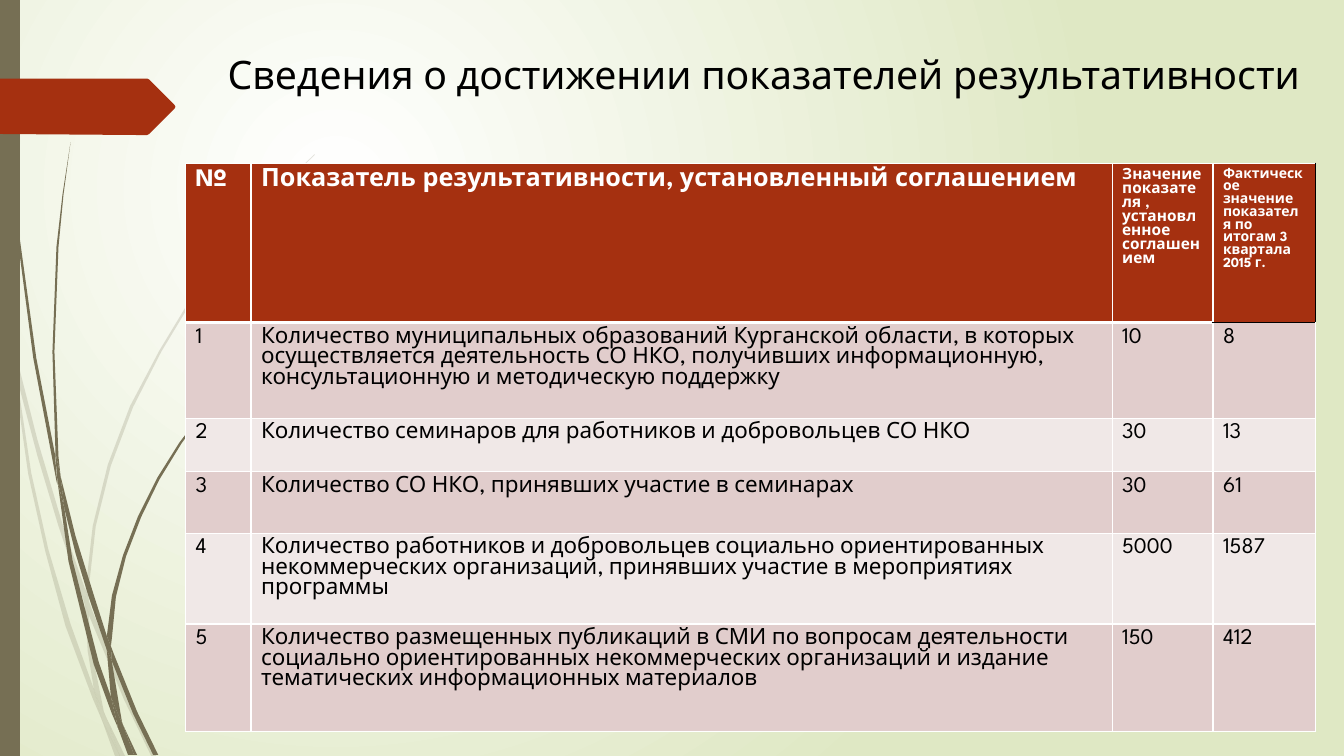
import pptx
import pptx.dml.color
import pptx.enum.text
import pptx.oxml
import pptx.oxml.ns
import pptx.util
from pptx.util import Inches

FONT = "League Spartan"
OLIVE, RED, WHITE, BLACK = "766F54", "A53010", "FFFFFF", "000000"
BANDS = ["F0E8E7", "E1CDCC"]
NS = pptx.oxml.ns.nsdecls("a")


def rgb(color):
    return pptx.dml.color.RGBColor.from_string(color)


def write(p, text, size=16, color=BLACK, bold=False, align=None):
    p.alignment = align
    r = p.add_run()
    r.text = text
    r.font.name = FONT
    r.font.size = pptx.util.Pt(size)
    r.font.bold = bold
    r.font.color.rgb = rgb(color)


prs = pptx.Presentation()
prs.slide_width, prs.slide_height = Inches(13.33), Inches(7.5)
s = prs.slides.add_slide(prs.slide_layouts[5])

# Background: radial gradient
fill = s.background.fill
fill.gradient()
for stop, color in zip(fill.gradient_stops, [WHITE, "DFE8C4"]):
    stop.color.rgb = rgb(color)
lin = s.element.find(".//" + pptx.oxml.ns.qn("a:lin"))
lin.getparent().replace(lin, pptx.oxml.parse_xml(
    f'<a:path {NS} path="circle">'
    '<a:fillToRect l="50000" t="50000" r="100000" b="100000"/></a:path>'))

# Grass blades: outline points in inches, pale blades behind dark ones
PALE_BLADES = [
    [(0.11, 3.5), (0.09, 3.22), (0, 2.82), (0, 2.99), (0.1, 3.44)],
    [(0.58, 5.22), (0.84, 5.99), (0.85, 5.86), (0.62, 5.2), (0.37, 4.36),
     (0.14, 3.45), (0.17, 3.76), (0.37, 4.52)],
    [(0.92, 6.07), (0.88, 5.96), (0.88, 6.1), (1.23, 6.94), (1.5, 7.5),
     (1.55, 7.5), (1.27, 6.92)],
    [(1.19, 7.5), (1.24, 7.5), (1.05, 7.11)],
    [(0.93, 6.83), (0.7, 6.19), (0.48, 5.45), (0.31, 4.69), (0.17, 3.76),
     (0.11, 3.5), (0.28, 4.7), (0.45, 5.47), (0.65, 6.21), (0.92, 6.93),
     (1.01, 7.14), (0.99, 7.07)],
    [(0.84, 5.99), (0.87, 6.46), (0.93, 6.83), (0.96, 6.92), (1.05, 7.11),
     (1.03, 7.06), (0.91, 6.46), (0.88, 6.1), (0.88, 6.08)],
    [(0.88, 5.84), (0.95, 5.22), (1.1, 4.62), (1.32, 4.04), (1.6, 3.49),
     (1.92, 2.96), (2.29, 2.45), (2.68, 1.98), (2.9, 1.75), (3.12, 1.54),
     (3.12, 1.53), (2.89, 1.75), (2.68, 1.97), (2.28, 2.44), (1.9, 2.95),
     (1.58, 3.48), (1.29, 4.03), (1.07, 4.61), (0.92, 5.22), (0.85, 5.84),
     (0.85, 5.86), (0.88, 5.96)],
    [(1.01, 7.14), (1.14, 7.5), (1.19, 7.5)],
    [(0.88, 6.08), (0.88, 6.1), (0.88, 5.96), (0.85, 5.86), (0.84, 5.99)],
    [(0.96, 6.92), (0.93, 6.83), (0.99, 7.07), (1.01, 7.14), (1.19, 7.5),
     (1.05, 7.11)],
]
DARK_BLADES = [
    [(0.07, 1.1), (0.17, 2.33), (0.33, 3.55), (0.56, 4.77), (0.57, 4.81),
     (0.55, 4.57), (0.55, 4.53), (0.36, 3.55), (0.19, 2.32), (0.08, 1.09),
     (0.05, 0.48), (0.04, 0), (0.03, 0), (0.04, 0.48)],
    [(0.88, 5.92), (1.06, 6.45), (1.06, 6.31), (0.93, 5.9), (0.75, 5.32),
     (0.6, 4.72), (0.64, 5.05), (0.75, 5.49)],
    [(1.13, 6.49), (1.1, 6.41), (1.11, 6.56), (1.32, 7.08), (1.52, 7.49),
     (1.57, 7.49), (1.36, 7.06)],
    [(1.1, 6.91), (0.98, 6.57), (0.72, 5.56), (0.64, 5.05), (0.57, 4.77),
     (0.68, 5.57), (0.93, 6.59), (1.11, 7.08), (1.17, 7.22), (1.16, 7.17)],
    [(0.6, 4.72), (0.58, 4.53), (0.54, 3.49), (0.58, 2.45), (0.63, 1.93),
     (0.7, 1.41), (0.62, 1.93), (0.56, 2.45), (0.52, 3.49), (0.55, 4.49)],
    [(1.33, 7.49), (1.36, 7.49), (1.22, 7.19)],
    [(0.57, 4.77), (0.64, 5.05), (0.6, 4.72), (0.55, 4.49), (0.55, 4.53)],
    [(1.11, 6.33), (1.15, 5.92), (1.25, 5.52), (1.4, 5.13), (1.58, 4.76),
     (1.8, 4.4), (2.05, 4.06), (2.31, 3.74), (2.45, 3.59), (2.61, 3.44),
     (2.6, 3.44), (2.45, 3.58), (2.31, 3.73), (2.04, 4.05), (1.78, 4.39),
     (1.56, 4.74), (1.37, 5.12), (1.22, 5.51), (1.11, 5.91), (1.06, 6.31),
     (1.1, 6.41)],
    [(1.17, 7.22), (1.27, 7.49), (1.31, 7.49)],
    [(1.06, 6.45), (1.1, 6.91), (1.16, 7.06), (1.22, 7.19), (1.21, 7.16),
     (1.11, 6.56), (1.09, 6.51)],
    [(1.06, 6.45), (1.09, 6.51), (1.11, 6.56), (1.1, 6.41), (1.06, 6.31)],
    [(1.16, 7.06), (1.1, 6.91), (1.16, 7.17), (1.17, 7.22), (1.3, 7.49),
     (1.33, 7.49), (1.22, 7.19)],
]
SIDE_BAR = [(0, 0), (0.2, 0), (0.2, 7.5), (0, 7.5)]
RED_ARROW = [(0, 0.78), (1.46, 0.78), (1.48, 0.79), (1.73, 1.04), (1.74, 1.06),
             (1.73, 1.08), (1.48, 1.33), (1.46, 1.34), (1.36, 1.34), (0, 1.33)]

for outlines, color, opacity in [(PALE_BLADES, OLIVE, 20), (DARK_BLADES, OLIVE, 100),
                                 ([SIDE_BAR], OLIVE, 100), ([RED_ARROW], RED, 100)]:
    for outline in outlines:
        points = [(Inches(x), Inches(y)) for x, y in outline]
        builder = s.shapes.build_freeform(*points[0])
        builder.add_line_segments(points[1:], close=True)
        sp = builder.convert_to_shape()
        sp.shadow.inherit = False
        sp.line.fill.background()
        sp.fill.solid()
        sp.fill.fore_color.rgb = rgb(color)
        if opacity < 100:
            clr = sp.element.spPr.find(".//" + pptx.oxml.ns.qn("a:srgbClr"))
            clr.append(pptx.oxml.parse_xml(f'<a:alpha {NS} val="{opacity * 1000}"/>'))

# Title
title = s.shapes.title
title.left, title.top = Inches(2.1), Inches(0.45)
title.width, title.height = Inches(10.95), Inches(1.4)
tf = title.text_frame
tf.word_wrap = True
tf.auto_size = pptx.enum.text.MSO_AUTO_SIZE.NONE
tf.vertical_anchor = pptx.enum.text.MSO_ANCHOR.TOP
write(tf.paragraphs[0], "Сведения о достижении показателей результативности",
      size=28, align=pptx.enum.text.PP_ALIGN.CENTER)

# Table of indicators
ROWS = [
    ("№", "Показатель результативности, установленный соглашением",
     "Значение показателя , установленное соглашением",
     "Фактическое значение показателя по итогам 3 квартала\n2015 г."),
    ("1", "Количество муниципальных образований Курганской области, в которых "
     "осуществляется деятельность СО НКО, получивших информационную, "
     "консультационную и методическую поддержку", "10", "8"),
    ("2", "Количество семинаров для работников и добровольцев СО НКО", "30", "13"),
    ("3", "Количество СО НКО, принявших участие в семинарах", "30", "61"),
    ("4", "Количество работников и добровольцев социально ориентированных "
     "некоммерческих организаций, принявших участие в мероприятиях программы",
     "5000", "1587"),
    ("5", "Количество размещенных публикаций в СМИ по вопросам деятельности "
     "социально ориентированных некоммерческих организаций и издание "
     "тематических информационных материалов", "150", "412"),
]
HEADER_SIZES = [18, 18, 11, 10]
table = s.shapes.add_table(len(ROWS), 4, Inches(1.84), Inches(1.62),
                           Inches(11.21), Inches(5.64)).table
for column, width in zip(table.columns, [0.65, 8.54, 1, 1.02]):
    column.width = Inches(width)
for row, height in zip(table.rows, [1.58, 0.95, 0.53, 0.61, 0.9, 1.07]):
    row.height = Inches(height)

for i, texts in enumerate(ROWS):
    for j, text in enumerate(texts):
        header = i == 0
        cell = table.cell(i, j)
        cell.fill.solid()
        cell.fill.fore_color.rgb = rgb(RED if header else BANDS[i % 2])
        tf = cell.text_frame
        for k, line in enumerate(text.split("\n")):
            p = tf.add_paragraph() if k else tf.paragraphs[0]
            write(p, line, size=HEADER_SIZES[j] if header else 16,
                  color=WHITE if header else BLACK, bold=header)

        borders = {side: (WHITE, 1) for side in "LRTB"}
        if header:
            borders["B"] = (WHITE, 3)
        if (i, j) == (0, 3):
            borders["R"] = borders["B"] = (BLACK, 1)
        if (i, j) == (1, 3):
            borders["T"] = (BLACK, 1)
        tcPr = cell._tc.get_or_add_tcPr()
        for n, (side, (color, width)) in enumerate(borders.items()):
            tcPr.insert(n, pptx.oxml.parse_xml(
                f'<a:ln{side} {NS} w="{width * 12700}"><a:solidFill>'
                f'<a:srgbClr val="{color}"/></a:solidFill></a:ln{side}>'))

prs.save("out.pptx")
